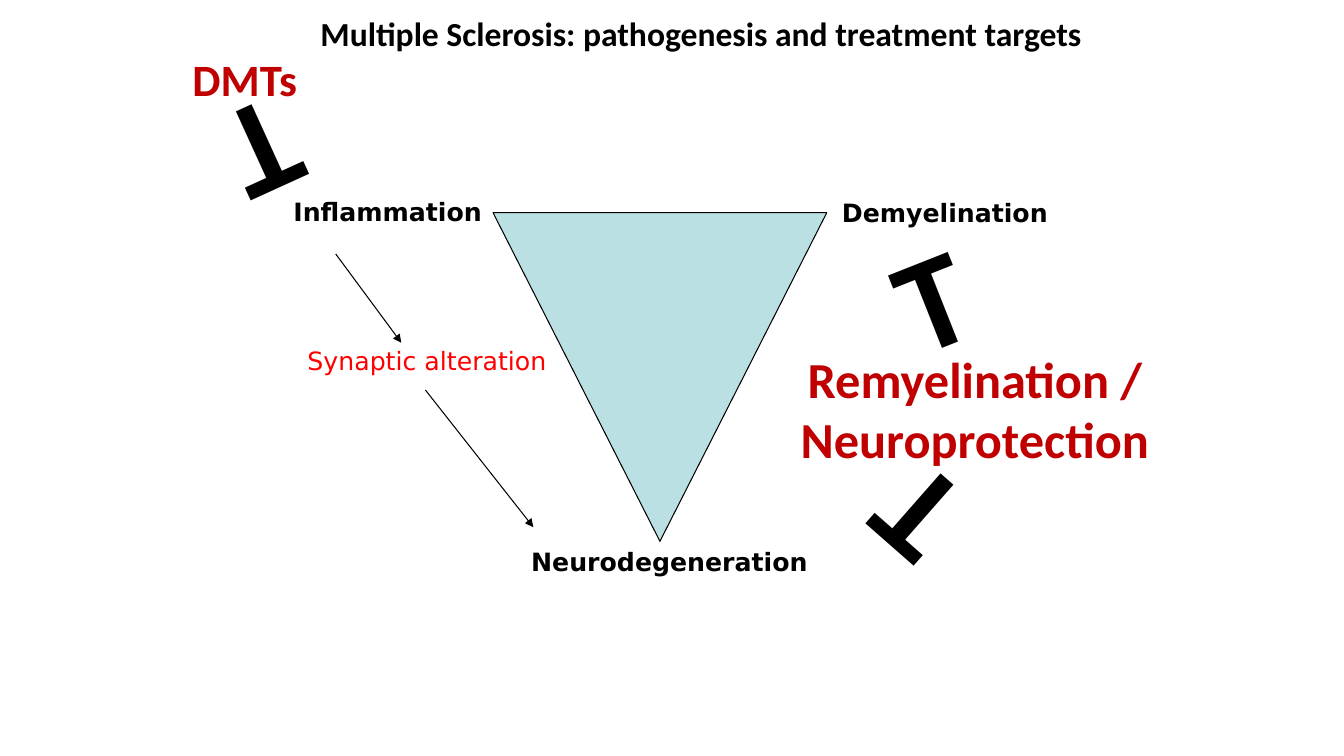
from lxml import etree
from pptx import Presentation
from pptx import util as u
from pptx.dml.color import RGBColor
from pptx.enum import shapes, text
from pptx.oxml.ns import qn

COLORS = {
    "black": "000000",
    "red": "FF0000",
    "dark_red": "C00000",
    "pale_blue": "BBE0E3",
}
LABEL_FONT = "DejaVu Sans"
MAIN_FONT = "Calibri"
LABEL_INSETS = (0.07, 0.04)
MAIN_INSETS = (0.1, 0.05)


def rgb(name):
    return RGBColor.from_string(COLORS[name])


def add_text(slide, box, lines, size, color="black", font=MAIN_FONT, bold=True,
             insets=MAIN_INSETS, centered=False, wrap=False, grow=True, rotation=0):
    shape = slide.shapes.add_textbox(*map(u.Inches, box))
    shape.rotation = rotation
    frame = shape.text_frame
    frame.word_wrap = wrap
    frame.auto_size = (text.MSO_AUTO_SIZE.SHAPE_TO_FIT_TEXT if grow
                       else text.MSO_AUTO_SIZE.NONE)
    frame.margin_left = frame.margin_right = u.Inches(insets[0])
    frame.margin_top = frame.margin_bottom = u.Inches(insets[1])
    for index, line in enumerate(lines):
        paragraph = frame.add_paragraph() if index else frame.paragraphs[0]
        paragraph.alignment = text.PP_ALIGN.CENTER if centered else text.PP_ALIGN.LEFT
        run = paragraph.add_run()
        run.text = line
        run.font.name = font
        run.font.size = u.Pt(size)
        run.font.bold = bold
        run.font.color.rgb = rgb(color)
    return shape


def add_label(slide, box, label, **options):
    return add_text(slide, box, [label], 18, font=LABEL_FONT,
                    insets=LABEL_INSETS, **options)


def add_inhibitor(slide, box, rotation):
    """A large rotated T, the sign for inhibition."""
    return add_text(slide, box, ["T"], 96, wrap=True, rotation=rotation)


def add_triangle(slide, box):
    shape = slide.shapes.add_shape(shapes.MSO_SHAPE.ISOSCELES_TRIANGLE,
                                   *map(u.Inches, box))
    shape.rotation = 180
    shape.shadow.inherit = False
    shape.fill.solid()
    shape.fill.fore_color.rgb = rgb("pale_blue")
    shape.line.color.rgb = rgb("black")
    shape.line.width = u.Pt(0.75)


def add_arrow(slide, start, end):
    arrow = slide.shapes.add_connector(shapes.MSO_CONNECTOR.STRAIGHT,
                                       *map(u.Inches, start + end))
    arrow.line.color.rgb = rgb("black")
    arrow.line.width = u.Pt(0.75)
    properties = arrow._element.spPr
    etree.SubElement(properties.find(qn("a:ln")), qn("a:tailEnd"), type="triangle")
    etree.SubElement(properties, qn("a:effectLst"))


def main():
    presentation = Presentation()
    presentation.slide_width = u.Inches(13.33)
    presentation.slide_height = u.Inches(7.5)
    slide = presentation.slides.add_slide(presentation.slide_layouts[6])

    # Disease triangle and its corners
    add_triangle(slide, (4.89, 2.11, 3.31, 3.26))
    add_label(slide, (8.28, 1.92, 2.72, 0.38), "Demyelination", wrap=True)
    add_label(slide, (5.19, 5.38, 2.9, 0.38), "Neurodegeneration", centered=True)
    add_label(slide, (2.84, 1.91, 2.09, 0.38), "Inflammation")

    # Path from inflammation to neurodegeneration
    add_label(slide, (2.98, 3.39, 2.53, 0.38), "Synaptic alteration",
              color="red", bold=False)
    add_arrow(slide, (3.33, 2.52), (3.98, 3.4))
    add_arrow(slide, (4.22, 3.87), (5.29, 5.23))

    # Title
    title = add_text(slide, (3.08, -0.33, 8.94, 1.31),
                     ["Multiple Sclerosis: pathogenesis and treatment targets"],
                     24, wrap=True, grow=False)
    title.text_frame.vertical_anchor = text.MSO_ANCHOR.MIDDLE

    # Treatments and what they inhibit
    add_text(slide, (7.82, 3.4, 3.7, 1.31), ["Remyelination /", "Neuroprotection"],
             36, color="dark_red", centered=True)
    add_inhibitor(slide, (8.8, 2.04, 1.06, 1.72), 338.4)
    add_inhibitor(slide, (8.76, 4.34, 0.7, 1.72), 221.3)
    add_inhibitor(slide, (2.02, 0.73, 1.06, 1.72), 155.5)
    add_text(slide, (1.81, 0.46, 1.25, 0.64), ["DMTs"], 32, color="dark_red")

    presentation.save("out.pptx")


if __name__ == "__main__":
    main()
